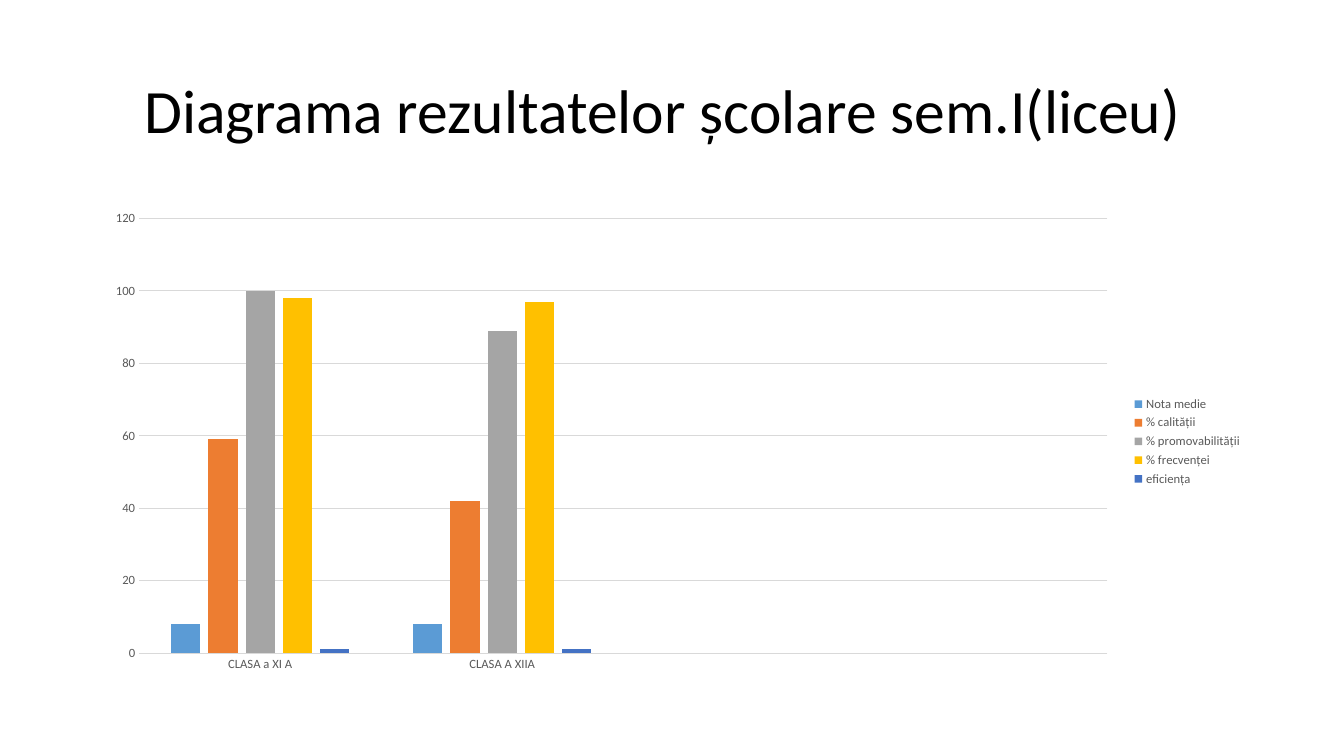
from dataclasses import dataclass

from pptx import Presentation
from pptx.chart.data import CategoryChartData
from pptx.dml.color import RGBColor
from pptx.enum.chart import XL_CHART_TYPE, XL_LEGEND_POSITION, XL_TICK_MARK
from pptx.enum.text import MSO_ANCHOR, PP_ALIGN
from pptx.util import Emu, Pt

COLUMNS = XL_CHART_TYPE.COLUMN_CLUSTERED
RIGHT = XL_LEGEND_POSITION.RIGHT
NO_TICK = XL_TICK_MARK.NONE
MIDDLE = MSO_ANCHOR.MIDDLE
LEFT = PP_ALIGN.LEFT

SCALE = 9144  # EMU per px, 100 px to the inch
FONT = "Calibri"
BLACK, GREY, PALE = "000000", "595959", "D9D9D9"


@dataclass
class Series:
    name: str
    values: tuple
    color: str


# Two classes, then two empty slots on the axis
CLASSES = ("CLASA a XI A", "CLASA A XIIA", "", "")
SERIES = (
    Series("Nota medie", (8, 8), "5B9BD5"),
    Series("% calității", (59, 42), "ED7D31"),
    Series("% promovabilității", (100, 89), "A5A5A5"),
    Series("% frecvenței", (98, 97), "FFC000"),
    Series("eficiența", (1, 1), "4472C4"),
)


def px(size: int) -> Emu:
    return Emu(size * SCALE)


def rgb(color: str) -> RGBColor:
    return RGBColor.from_string(color)


def style(font, size: int, color: str) -> None:
    font.name = FONT
    font.size = Pt(size)
    font.color.rgb = rgb(color)


def stroke(line, color: str) -> None:
    line.color.rgb = rgb(color)
    line.width = Pt(0.75)


def add_text(slide, text: str, box: tuple, *, size: int, color: str,
             indent: int = 10, spacing: float = 1.0) -> None:
    frame = slide.shapes.add_textbox(*map(px, box)).text_frame
    frame.word_wrap = True
    frame.vertical_anchor = MIDDLE
    frame.margin_left = px(indent)
    para = frame.paragraphs[0]
    para.alignment = LEFT
    para.line_spacing = spacing
    run = para.add_run()
    run.text = text
    style(run.font, size, color)


def add_columns(slide, box: tuple) -> None:
    data = CategoryChartData()
    data.categories = CLASSES
    for item in SERIES:
        blanks = (None,) * (len(CLASSES) - len(item.values))
        data.add_series(item.name, item.values + blanks)
    chart = slide.shapes.add_chart(COLUMNS, *map(px, box), data).chart
    chart.has_title = False
    style(chart.font, 10, BLACK)

    # Columns
    plot = chart.plots[0]
    plot.gap_width = 219
    plot.overlap = -27
    plot.vary_by_categories = False
    for series, item in zip(plot.series, SERIES):
        series.format.fill.solid()
        series.format.fill.fore_color.rgb = rgb(item.color)
        series.format.line.fill.background()

    # Axes
    for axis in (chart.category_axis, chart.value_axis):
        axis.major_tick_mark = NO_TICK
        axis.minor_tick_mark = NO_TICK
        style(axis.tick_labels.font, 9, GREY)
    stroke(chart.category_axis.format.line, PALE)
    scale = chart.value_axis
    scale.minimum_scale, scale.maximum_scale, scale.major_unit = 0, 120, 20
    scale.format.line.fill.background()
    scale.has_major_gridlines = True
    stroke(scale.major_gridlines.format.line, PALE)

    # Legend
    chart.has_legend = True
    chart.legend.position = RIGHT
    chart.legend.include_in_layout = False
    style(chart.legend.font, 9, GREY)


def main() -> None:
    deck = Presentation()
    deck.slide_width, deck.slide_height = px(1333), px(750)
    slide = deck.slides.add_slide(deck.slide_layouts[6])
    add_text(slide, "Diagrama rezultatelor școlare sem.I(liceu)",
             (92, 40, 1150, 145), size=44, color=BLACK, indent=51, spacing=0.9)
    add_columns(slide, (92, 200, 1150, 476))
    deck.save("out.pptx")


if __name__ == "__main__":
    main()
